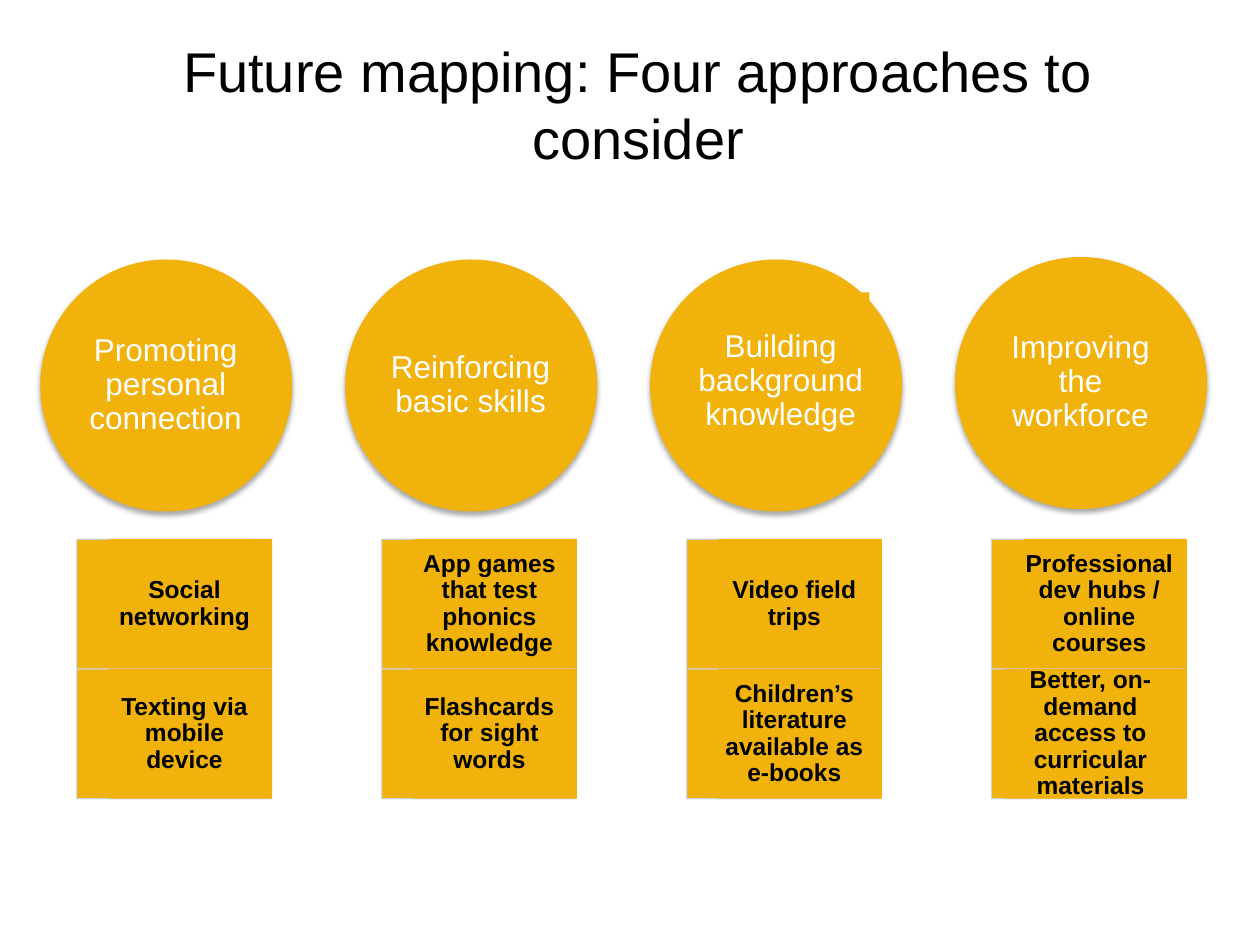
import pptx
import pptx.util
import pptx.dml.color
import pptx.enum.shapes
import pptx.enum.text
import pptx.oxml.ns
import lxml.etree

INK = {"gold": "F2B20C", "edge": "CBD3E3", "text": "000000", "light": "FFFFFF"}
FONT = "Arial"
KIND = pptx.enum.shapes.MSO_SHAPE
LEFT, STEP = 0.32, 2.42  # first column and column pitch
DISC, DISC_TOP = 2, 2.06
PAD, LABEL = 0.29, 1.41  # label and cards start PAD inside the disc
CARD_W, CARD_H, CARD_TOP = 1.54, 1.03, 4.28

# heading, label shift (right, down), disc drop, cards as (text, left inset)
COLUMNS = [
    ("Promoting personal connection", (0, 0), 0,
     [("Social networking", 0.25), ("Texting via mobile device", 0.25)]),
    ("Reinforcing basic skills", (0, 0), 0,
     [("App games that test phonics knowledge", 0.25),
      ("Flashcards for sight words", 0.25)]),
    ("Building background knowledge", (0.04, -0.03), 0,
     [("Video field trips", 0.25),
      ("Children’s literature available as e-books", 0.25)]),
    ("Improving the workforce", (0, 0), -0.02,
     [("Professional dev hubs / online courses", 0.25),
      ("Better, on-demand access to curricular materials", 0.11)]),
]


def color(name):
    return pptx.dml.color.RGBColor.from_string(INK[name])


def add_node(parent, tag, **attrs):
    node = lxml.etree.SubElement(parent, pptx.oxml.ns.qn(tag))
    for key, value in attrs.items():
        node.set(key, str(value))
    return node


def add_block(slide, kind, *box):
    block = slide.shapes.add_shape(kind, *map(pptx.util.Inches, box))
    block.shadow.inherit = False
    block.fill.solid()
    block.fill.fore_color.rgb = color("gold")
    block.line.fill.background()
    return block


def set_text(shape, text, size, ink, bold=False, pads=(0, 0, 0, 0), space=0.9):
    """Fill the shape with centred text; pads run left, top, right, bottom."""
    frame = shape.text_frame
    frame.text = text
    frame.word_wrap = True
    frame.vertical_anchor = pptx.enum.text.MSO_ANCHOR.MIDDLE
    (frame.margin_left, frame.margin_top,
     frame.margin_right, frame.margin_bottom) = map(pptx.util.Inches, pads)
    line = frame.paragraphs[0]
    line.alignment = pptx.enum.text.PP_ALIGN.CENTER
    line.line_spacing = space
    font = line.runs[0].font
    font.name, font.size, font.bold = FONT, pptx.util.Pt(size), bold
    font.color.rgb = color(ink)


def add_title(slide, text):
    box = slide.shapes.add_textbox(*map(pptx.util.Inches, (0.48, 0.07, 9.17, 1.5)))
    set_text(box, text, 32, "text", pads=(0.1, 0.05, 0.1, 0.05), space=1.0)


def add_disc(slide, left, top, text, shift):
    disc = add_block(slide, KIND.OVAL, left, top, DISC, DISC)
    effects = disc._element.spPr.find(pptx.oxml.ns.qn("a:effectLst"))
    shade = add_node(effects, "a:outerShdw", blurRad=pptx.util.Pt(3.1),
                     dist=pptx.util.Pt(1.8), dir=90 * 60000, rotWithShape=0)
    tint = add_node(shade, "a:srgbClr", val=INK["text"])
    add_node(tint, "a:alpha", val=35000)
    label = add_block(slide, KIND.RECTANGLE, left + PAD + shift[0],
                      top + PAD + shift[1], LABEL, LABEL)
    set_text(label, text, 18, "light")


def add_card(slide, left, top, text, inset):
    """Draw an edged card and, on its right part, the panel with the text."""
    card = add_block(slide, KIND.RECTANGLE, left, top, CARD_W, CARD_H)
    card.line.color.rgb = color("edge")
    card.line.width = pptx.util.Pt(0.75)
    tint = card.line._ln.find(".//" + pptx.oxml.ns.qn("a:srgbClr"))
    add_node(tint, "a:alpha", val=90000)
    panel = add_block(slide, KIND.RECTANGLE, left + inset, top,
                      CARD_W - inset + 0.01, CARD_H)
    set_text(panel, text, 14, "text", True, (0, 0.09, 0.09, 0.09))


def main():
    deck = pptx.Presentation()
    deck.slide_width = pptx.util.Inches(10)
    deck.slide_height = pptx.util.Inches(7.5)
    slide = deck.slides.add_slide(deck.slide_layouts[6])
    add_title(slide, "Future mapping: Four approaches to consider")
    for col, (head, shift, drop, cards) in enumerate(COLUMNS):
        left = LEFT + col * STEP
        add_disc(slide, left, DISC_TOP + drop, head, shift)
        for row, (text, inset) in enumerate(cards):
            add_card(slide, left + PAD, CARD_TOP + row * CARD_H, text, inset)
    deck.save("out.pptx")


if __name__ == "__main__":
    main()
